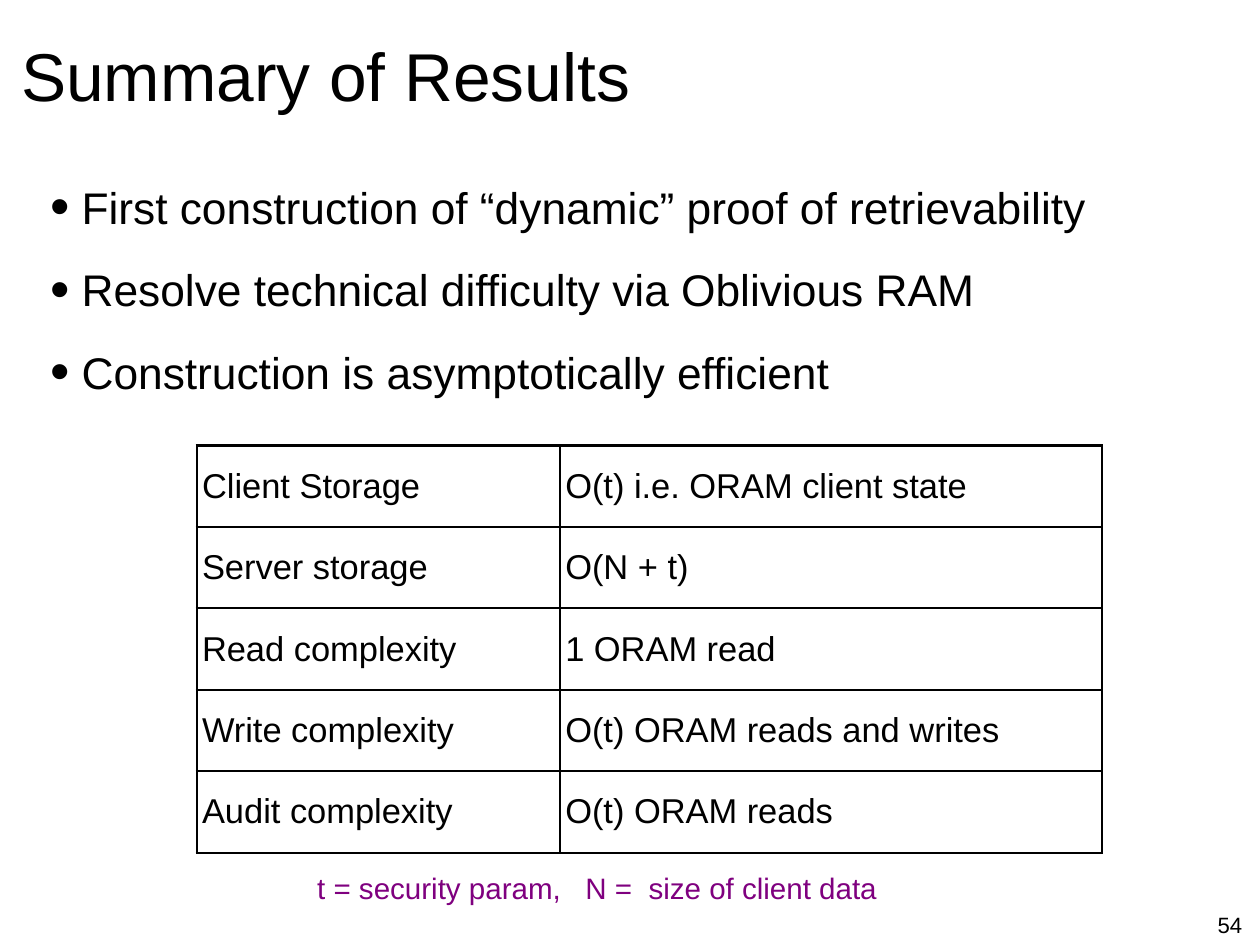
from lxml import etree
from pptx import Presentation
from pptx import util as u
from pptx.dml.color import RGBColor
from pptx.enum import text
from pptx.oxml import ns

# Content
TITLE = "Summary of Results"
POINTS = [
    "First construction of “dynamic” proof of retrievability",
    "Resolve technical difficulty via Oblivious RAM",
    "Construction is asymptotically efficient",
]
COSTS = [
    ("Client Storage", "O(t) i.e. ORAM client state"),
    ("Server storage", "O(N + t)"),
    ("Read complexity", "1 ORAM read"),
    ("Write complexity", "O(t) ORAM reads and writes"),
    ("Audit complexity", "O(t) ORAM reads"),
]
LEGEND = "t = security param,   N =  size of client data "
PAGE = "54"

# Format
COLORS = {"ink": "000000", "legend": "7F007F"}
FONT = "Arial"
SLIDE_W, SLIDE_H = 14.22, 10.67
COST_COLUMNS, COST_ROW = (4.1, 6.12), 0.92
CELL_INSET, BORDER_PT = 0.06, 2
BULLET_INDENT = 0.35
LEFT, CENTER = text.PP_ALIGN.LEFT, text.PP_ALIGN.CENTER
MIDDLE = text.MSO_ANCHOR.MIDDLE
SIDES = ("left", "top", "right", "bottom")


def box(left, top, width, height):
    return [u.Inches(v) for v in (left, top, width, height)]


def apply(target, values):
    for name, value in values.items():
        setattr(target, name, value)


def add_xml(parent, tag, **attributes):
    return etree.SubElement(parent, ns.qn(tag), attributes)


def write(frame, lines, size, color="ink", align=LEFT, before=0):
    """Fill a text frame with one formatted paragraph per line."""
    for i, line in enumerate(lines):
        paragraph = frame.add_paragraph() if i else frame.paragraphs[0]
        run = paragraph.add_run()
        run.text = line
        apply(paragraph, {"alignment": align, "space_before": u.Pt(before)})
        apply(run.font, {"name": FONT, "size": u.Pt(size)})
        run.font.color.rgb = RGBColor.from_string(COLORS[color])


def set_frame(frame, inset=0):
    apply(frame, {"word_wrap": True, "auto_size": text.MSO_AUTO_SIZE.NONE,
                  "vertical_anchor": MIDDLE})
    apply(frame, {f"margin_{side}": u.Inches(inset) for side in SIDES})


def add_text(slide, place, lines, **style):
    frame = slide.shapes.add_textbox(*box(*place)).text_frame
    set_frame(frame)
    write(frame, lines, **style)
    return frame


def add_bullet(paragraph):
    properties = paragraph._p.get_or_add_pPr()
    properties.set("marL", str(u.Inches(BULLET_INDENT)))
    properties.set("indent", str(-u.Inches(BULLET_INDENT)))
    add_xml(properties, "a:buSzPct", val="125000")
    add_xml(properties, "a:buFont", typeface=FONT)
    add_xml(properties, "a:buChar", char="•")


def add_borders(cell):
    properties = cell._tc.get_or_add_tcPr()
    for edge in "LRTB":
        line = add_xml(properties, f"a:ln{edge}", w=str(u.Pt(BORDER_PT)))
        add_xml(add_xml(line, "a:solidFill"), "a:srgbClr", val=COLORS["ink"])


def add_costs(slide, left, top):
    height = COST_ROW * len(COSTS)
    costs = slide.shapes.add_table(
        len(COSTS), len(COST_COLUMNS),
        *box(left, top, sum(COST_COLUMNS), height)).table
    apply(costs, {"first_row": False, "horz_banding": False})
    for column, width in zip(costs.columns, COST_COLUMNS):
        column.width = u.Inches(width)
    for r, entries in enumerate(COSTS):
        for c, entry in enumerate(entries):
            cell = costs.cell(r, c)
            write(cell.text_frame, [entry], size=28)
            apply(cell, {f"margin_{side}": u.Inches(CELL_INSET) for side in SIDES})
            cell.vertical_anchor = MIDDLE
            add_borders(cell)
            cell.fill.background()


def main():
    deck = Presentation()
    apply(deck, {"slide_width": u.Inches(SLIDE_W), "slide_height": u.Inches(SLIDE_H)})
    slide = deck.slides.add_slide(deck.slide_layouts[5])

    # Title
    title = slide.shapes.title
    apply(title, dict(zip(("left", "top", "width", "height"),
                          box(0.24, 0.35, 13.11, 0.97))))
    set_frame(title.text_frame)
    write(title.text_frame, [TITLE], size=55, before=20)

    # Main points
    points = add_text(slide, (0.57, 2.01, 13.51, 2.51), POINTS, size=36, before=24)
    for point in points.paragraphs:
        add_bullet(point)

    # Cost table with its legend, and the page number
    add_costs(slide, 2.22, 5.03)
    add_text(slide, (2.57, 9.78, 8.43, 0.49), [LEGEND],
             size=24, color="legend", align=CENTER, before=24)
    page = add_text(slide, (13.68, 10.24, 0.4, 0.39), [PAGE], size=18, align=CENTER)
    page.word_wrap = False

    deck.save("out.pptx")


if __name__ == "__main__":
    main()
